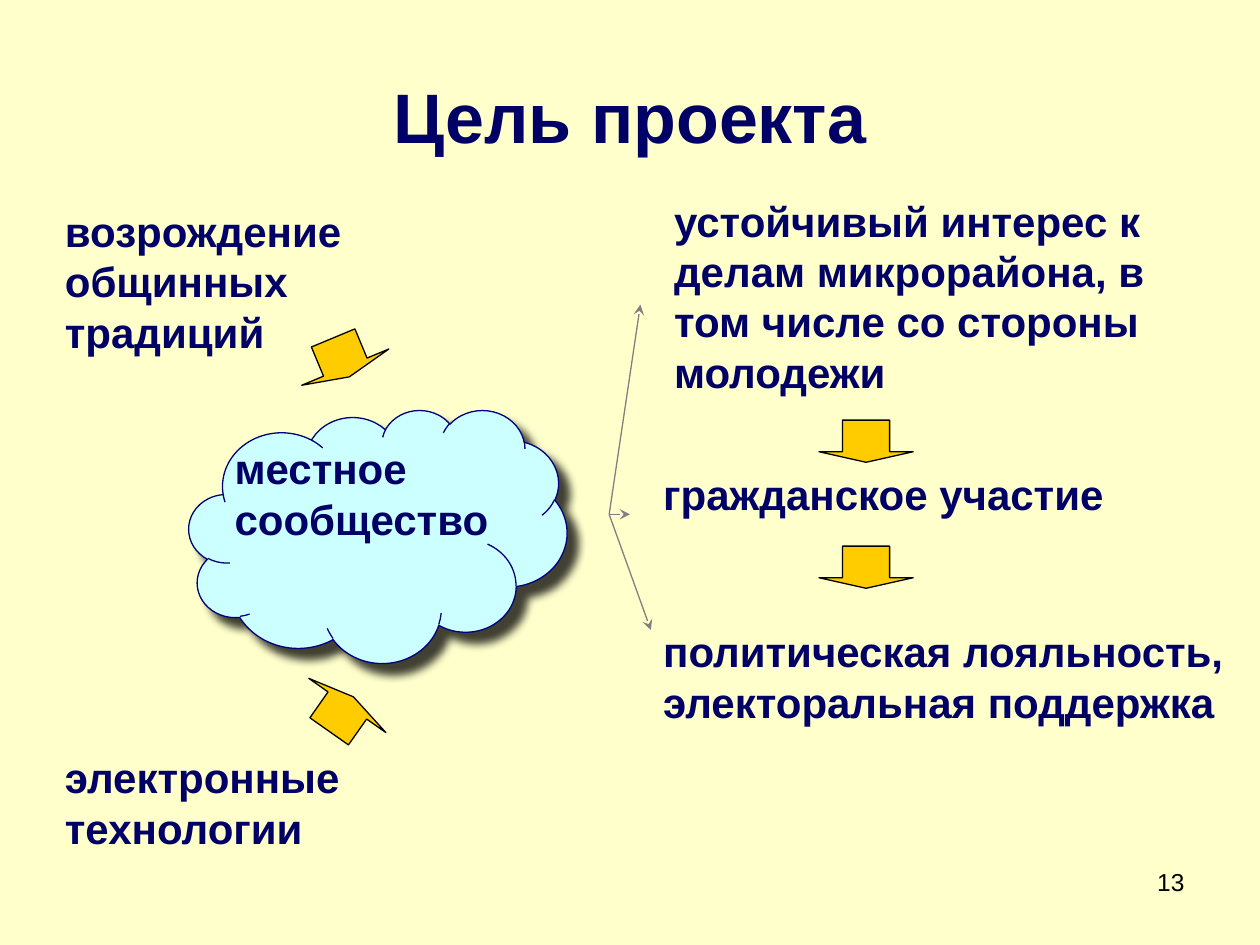
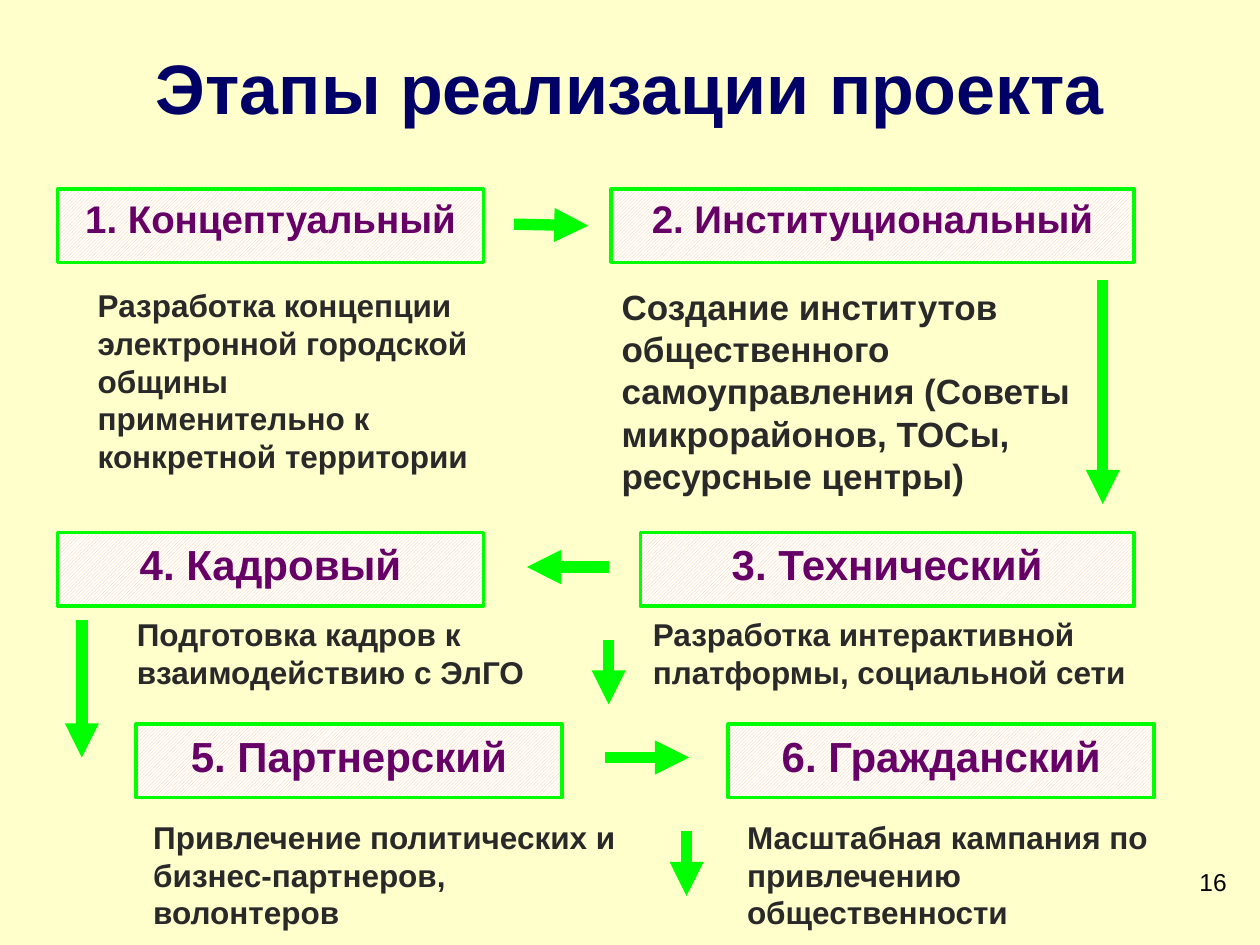
"""Builds two slides on the goal and the stages of a community project."""
from lxml import etree
from pptx import Presentation
from pptx.dml.color import RGBColor
from pptx.enum.dml import MSO_PATTERN
from pptx.enum.shapes import MSO_CONNECTOR, MSO_SHAPE
from pptx.enum.text import MSO_ANCHOR, MSO_AUTO_SIZE, PP_ALIGN
from pptx.oxml.ns import qn
from pptx.util import Cm, Pt

LEFT, CENTER, RIGHT = PP_ALIGN.LEFT, PP_ALIGN.CENTER, PP_ALIGN.RIGHT
TOP, MIDDLE = MSO_ANCHOR.TOP, MSO_ANCHOR.MIDDLE
GROW, FIXED = MSO_AUTO_SIZE.SHAPE_TO_FIT_TEXT, MSO_AUTO_SIZE.NONE
CLOUD, DOWN_ARROW, RECTANGLE = MSO_SHAPE.CLOUD, MSO_SHAPE.DOWN_ARROW, MSO_SHAPE.RECTANGLE
STRAIGHT = MSO_CONNECTOR.STRAIGHT
HATCH = MSO_PATTERN.LIGHT_UPWARD_DIAGONAL

FONT = "Arial"
CREAM, NAVY, BLACK, GRAY = "FFFFCC", "000066", "000000", "808080"
SKY, CLOUD_EDGE, GOLD = "CCFFFF", "000080", "FFCC00"
GREEN, PURPLE, CHARCOAL = "00FF00", "660066", "292929"
PEACH, WHITE = "FFCC99", "FFFFFF"
SLIDE_WIDTH, SLIDE_HEIGHT = 25.4, 19.05
STAGE_HEIGHT = 1.48

IDEAS = [
    ("возрождение общинных традиций", (1.06, 4.02, 6.99, 3.3)),
    ("электронные технологии", (1.06, 15.03, 6.99, 2.29)),
    ("местное сообщество", (4.48, 8.8, 6.99, 2.29)),
    ("устойчивый интерес к делам микрорайона, в том числе со стороны молодежи",
     (13.34, 3.81, 11.64, 4.32)),
    ("политическая лояльность, электоральная поддержка", (13.12, 12.49, 11.86, 3.3)),
    ("гражданское участие", (13.12, 9.31, 11.22, 1.27)),
]
RESULT_ENDS = [(12.91, 6.14), (12.7, 10.37), (13.12, 12.7)]
BLOCK_ARROWS = [(16.51, 8.47, 0), (16.51, 11.01, 0), (5.93, 6.78, 337.4), (5.93, 13.97, 215.1)]

STAGES = [
    ("1. Концептуальный", 22, (1.16, 3.81, 8.59),
     "Разработка концепции электронной городской общины применительно "
     "к конкретной территории", 18, (1.72, 5.64, 8.0, 4.11)),
    ("2. Институциональный", 22, (12.32, 3.81, 10.54),
     "Создание институтов общественного самоуправления (Советы микрорайонов, "
     "ТОСы, ресурсные центры)", 20, (12.28, 5.64, 9.78, 4.52)),
    ("3. Технический", 24, (12.91, 10.74, 9.95),
     "Разработка интерактивной платформы, социальной сети", 18, (12.91, 12.28, 11.64, 1.8)),
    ("4. Кадровый", 24, (1.16, 10.74, 8.59),
     "Подготовка кадров к взаимодействию с ЭлГО", 18, (2.51, 12.28, 9.35, 1.8)),
    ("5. Партнерский", 24, (2.74, 14.6, 8.59),
     "Привлечение политических и бизнес-партнеров, волонтеров", 18,
     (2.84, 16.36, 10.19, 2.57)),
    ("6. Гражданский", 24, (14.68, 14.6, 8.59),
     "Масштабная кампания по привлечению общественности", 18, (14.81, 16.36, 10.19, 2.57)),
]
STAGE_ARROWS = [
    ((10.36, 4.52), (11.86, 4.55)),
    ((22.23, 5.64), (22.23, 10.16)),
    ((12.27, 11.43), (10.62, 11.43)),
    ((12.27, 12.9), (12.27, 14.2)),
    ((1.65, 12.5), (1.65, 15.27)),
    ((12.19, 15.27), (13.89, 15.27)),
    ((13.84, 16.76), (13.84, 18.06)),
]


def rgb(hex_color):
    """Turn a hex string into a colour."""
    return RGBColor.from_string(hex_color)


def write(shape, text, size=24, color=NAVY, bold=True, align=LEFT, anchor=TOP, fit=FIXED):
    """Put one formatted paragraph into a shape."""
    frame = shape.text_frame
    frame.word_wrap = True
    frame.auto_size = fit
    frame.vertical_anchor = anchor
    paragraph = frame.paragraphs[0]
    paragraph.alignment = align
    run = paragraph.add_run()
    run.text = text
    run.font.name = FONT
    run.font.size = Pt(size)
    run.font.bold = bold
    run.font.color.rgb = rgb(color)


def add_text(slide, text, box, **style):
    """Add a text box; box is left, top, width and height in cm."""
    write(slide.shapes.add_textbox(*map(Cm, box)), text, **style)


def add_figure(slide, kind, box, edge, weight, fill=None):
    """Add a preset shape with an outline and, if given, a solid fill."""
    figure = slide.shapes.add_shape(kind, *map(Cm, box))
    figure.shadow.inherit = False
    figure.line.color.rgb = rgb(edge)
    figure.line.width = Pt(weight)
    if fill:
        figure.fill.solid()
        figure.fill.fore_color.rgb = rgb(fill)
    return figure


def add_arrow(slide, start, end, color, weight, head):
    """Add a straight arrow without shadow."""
    arrow = slide.shapes.add_connector(STRAIGHT, *map(Cm, start + end))
    arrow.line.color.rgb = rgb(color)
    arrow.line.width = Pt(weight)
    etree.SubElement(arrow.line._get_or_add_ln(), qn("a:tailEnd"), type=head)
    etree.SubElement(arrow._element.spPr, qn("a:effectLst"))


def add_cloud(slide, box):
    """Add the community cloud with its soft shadow."""
    cloud = add_figure(slide, CLOUD, box, CLOUD_EDGE, 0.75, SKY)
    effects = cloud._element.spPr.find(qn("a:effectLst"))
    shadow = etree.SubElement(effects, qn("a:outerShdw"), blurRad=str(Pt(5)),
                              dist=str(Pt(8.5)), dir="2700000")
    tint = etree.SubElement(shadow, qn("a:srgbClr"), val=BLACK)
    etree.SubElement(tint, qn("a:alpha"), val="75000")


def add_stage(slide, name, name_size, place, details, details_size, details_box):
    """Add a hatched stage heading and its description."""
    heading = add_figure(slide, RECTANGLE, place + (STAGE_HEIGHT,), GREEN, 2)
    heading.fill.patterned()
    heading.fill.pattern = HATCH
    heading.fill.fore_color.rgb = rgb(PEACH)
    heading.fill.back_color.rgb = rgb(WHITE)
    write(heading, name, size=name_size, color=PURPLE, align=CENTER)
    add_text(slide, details, details_box, size=details_size, color=CHARCOAL, fit=GROW)


def add_titled_slide(deck, title, top, height, number, number_left):
    """Add a slide with the shared title style and page number."""
    slide = deck.slides.add_slide(deck.slide_layouts[5])
    heading = slide.shapes.title
    heading.left, heading.top = Cm(0), Cm(top)
    heading.width, heading.height = Cm(SLIDE_WIDTH), Cm(height)
    write(heading, title, size=40, align=CENTER, anchor=MIDDLE)
    add_text(slide, number, (number_left, 17.36, 5.93, 1.32), size=14,
             color=BLACK, bold=False, align=RIGHT)
    return slide


def build_goal(deck):
    """Build the slide on the project goal."""
    slide = add_titled_slide(deck, "Цель проекта", 1.27, 2.12, "13", 18.2)
    add_cloud(slide, (3.81, 8.26, 7.62, 5.1))
    for idea, box in IDEAS:
        add_text(slide, idea, box, fit=GROW)
    for end in RESULT_ENDS:
        add_arrow(slide, (12.28, 10.37), end, GRAY, 0.75, "stealth")
    for left, top, angle in BLOCK_ARROWS:
        arrow = add_figure(slide, DOWN_ARROW, (left, top, 1.9, 0.85), BLACK, 0.75, GOLD)
        arrow.adjustments[0], arrow.adjustments[1] = 0.5, 0.25
        arrow.rotation = angle


def build_stages(deck):
    """Build the slide on the six project stages."""
    slide = add_titled_slide(deck, "Этапы реализации проекта", 0.64, 2.2, "16", 19.05)
    for stage in STAGES:
        add_stage(slide, *stage)
    for start, end in STAGE_ARROWS:
        add_arrow(slide, start, end, GREEN, 6.5, "triangle")


def main():
    """Build and save the deck."""
    deck = Presentation()
    deck.slide_width, deck.slide_height = Cm(SLIDE_WIDTH), Cm(SLIDE_HEIGHT)
    backdrop = deck.slide_master.background.fill
    backdrop.solid()
    backdrop.fore_color.rgb = rgb(CREAM)
    build_goal(deck)
    build_stages(deck)
    deck.save("out.pptx")


if __name__ == "__main__":
    main()
